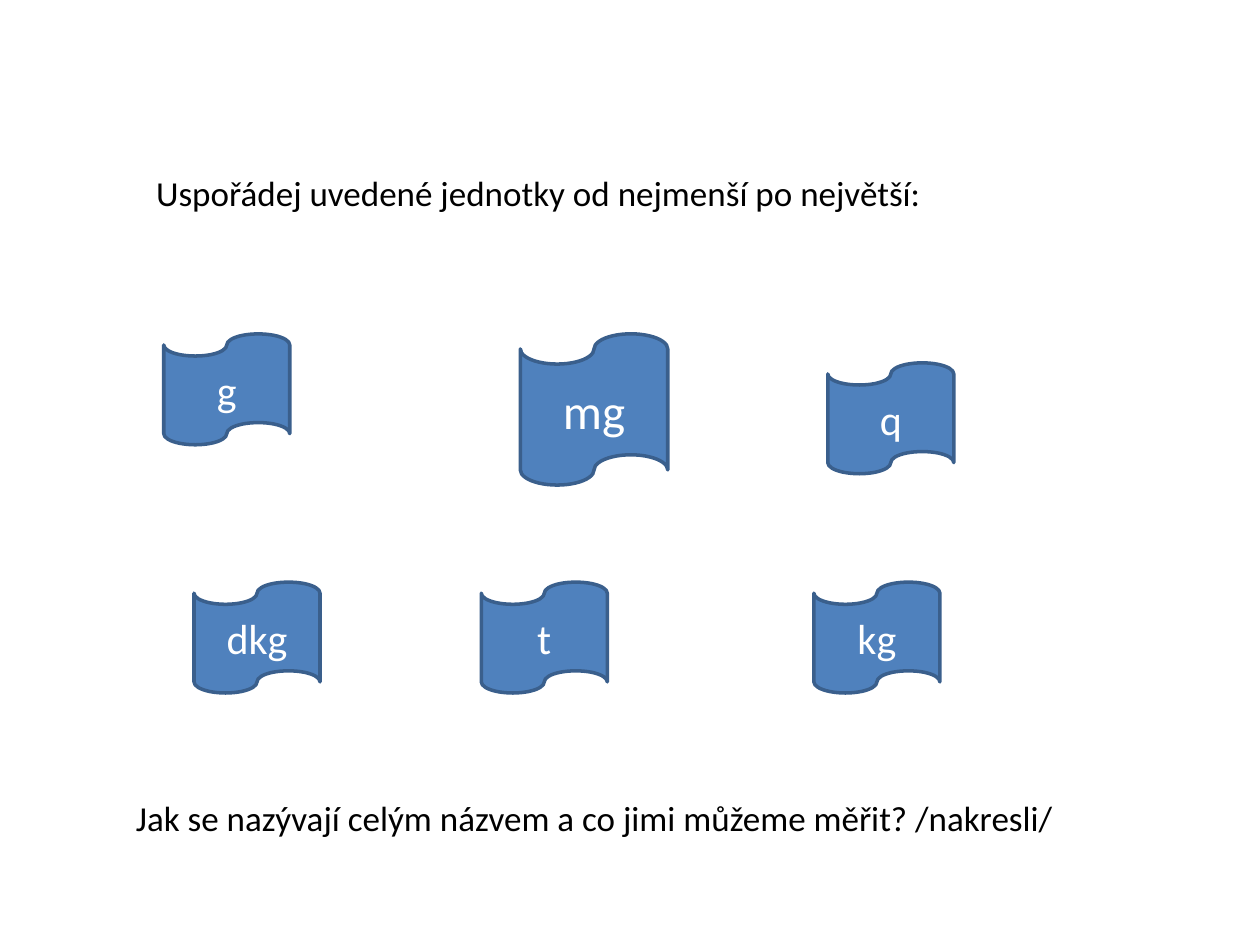
from pptx import Presentation
from pptx import util as u
from pptx.dml.color import RGBColor
from pptx.enum import shapes, text

BLACK = RGBColor(0x00, 0x00, 0x00)
WHITE = RGBColor(0xFF, 0xFF, 0xFF)
BLUE = RGBColor(0x4F, 0x81, 0xBD)
DARK_BLUE = RGBColor(0x3A, 0x5F, 0x8C)


class Worksheet:
    font = "Calibri"

    def __init__(self, slide):
        self.slide = slide

    def add_words(self, frame, words, size, color):
        run = frame.paragraphs[0].add_run()
        run.text = words
        run.font.name = self.font
        run.font.size = u.Pt(size)
        run.font.color.rgb = color

    def instruction(self, words, left, top, width, height):
        box = self.slide.shapes.add_textbox(*map(u.Inches, (left, top, width, height)))
        frame = box.text_frame
        frame.word_wrap = False
        frame.auto_size = text.MSO_AUTO_SIZE.SHAPE_TO_FIT_TEXT
        self.add_words(frame, words, 20, BLACK)

    def unit_flag(self, unit, left, top, width=1, height=0.88, size=24):
        flag = self.slide.shapes.add_shape(
            shapes.MSO_SHAPE.FLOWCHART_PUNCHED_TAPE,
            *map(u.Inches, (left, top, width, height)))
        flag.shadow.inherit = False
        flag.fill.solid()
        flag.fill.fore_color.rgb = BLUE
        flag.line.color.rgb = DARK_BLUE
        flag.line.width = u.Pt(2)
        frame = flag.text_frame
        frame.vertical_anchor = text.MSO_ANCHOR.MIDDLE
        frame.paragraphs[0].alignment = text.PP_ALIGN.CENTER
        self.add_words(frame, unit, size, WHITE)


def main():
    deck = Presentation()
    deck.slide_width, deck.slide_height = u.Inches(10), u.Inches(7.5)
    sheet = Worksheet(deck.slides.add_slide(deck.slide_layouts[6]))

    sheet.instruction("Uspořádej uvedené jednotky od nejmenší po největší:",
                      1.14, 1.31, 6.32, 0.77)
    sheet.unit_flag("g", 1.3, 2.65)
    sheet.unit_flag("mg", 4.13, 2.65, width=1.17, height=1.2, size=28)
    sheet.unit_flag("q", 6.57, 2.88)
    for unit, left in (("dkg", 1.54), ("t", 3.82), ("kg", 6.46)):
        sheet.unit_flag(unit, left, 4.62)
    sheet.instruction("Jak se nazývají celým názvem a co jimi můžeme měřit? /nakresli/",
                      0.98, 6.27, 7.55, 0.44)

    deck.save("out.pptx")


if __name__ == "__main__":
    main()
